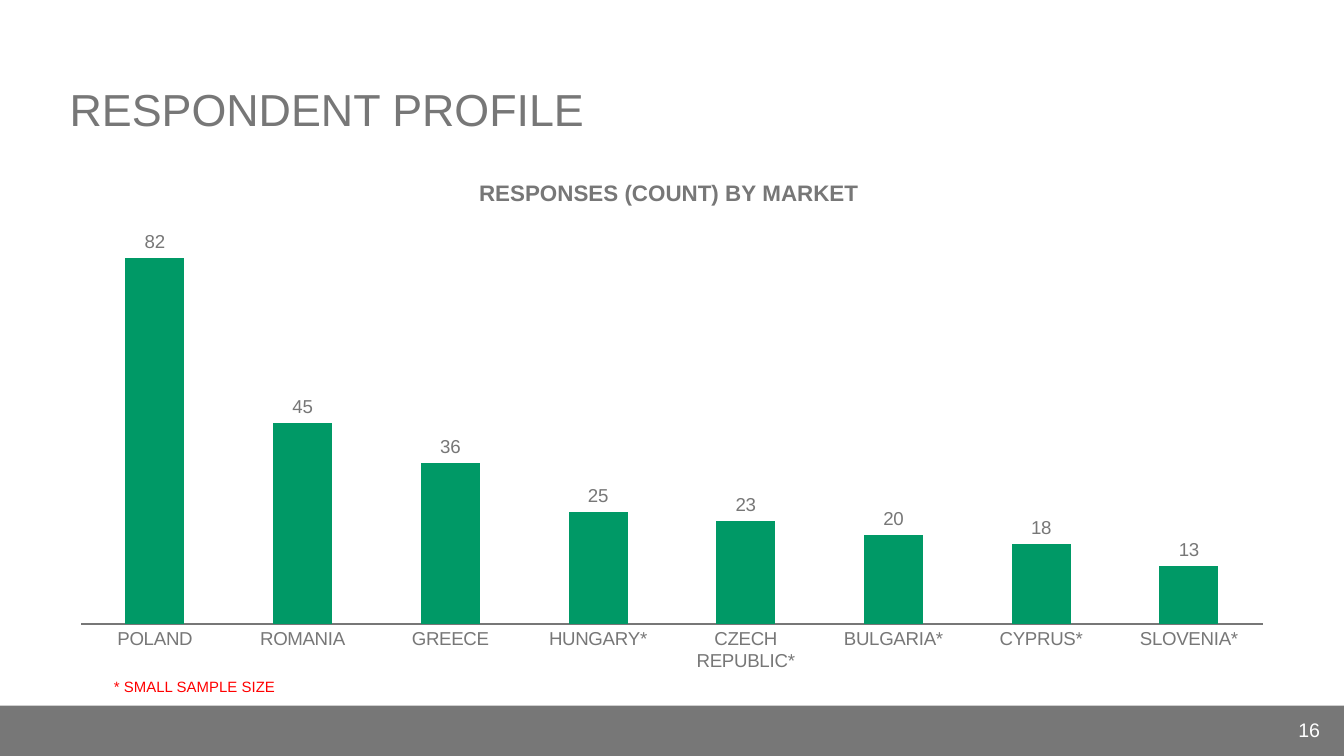
from lxml import etree
from pptx import Presentation
from pptx.chart.data import CategoryChartData
from pptx.dml.color import RGBColor
from pptx.enum import chart as ch, shapes, text
from pptx.oxml import ns
from pptx.util import Inches, Pt

GRAY, GREEN, WHITE, RED = "777777", "009966", "FFFFFF", "FF0000"


def color(value):
    return RGBColor.from_string(value)


def add_text(words, left, top, width, height, size, fill,
             align=text.PP_ALIGN.LEFT, anchor=text.MSO_ANCHOR.TOP):
    frame = slide.shapes.add_textbox(
        Inches(left), Inches(top), Inches(width), Inches(height)).text_frame
    frame.word_wrap = True
    frame.vertical_anchor = anchor
    line = frame.paragraphs[0]
    line.alignment = align
    run = line.add_run()
    run.text = words
    run.font.name = "Arial"
    run.font.size = Pt(size)
    run.font.color.rgb = color(fill)


deck = Presentation()
deck.slide_width = Inches(10)
deck.slide_height = deck.slide_width * 9 // 16
slide = deck.slides.add_slide(deck.slide_layouts[6])

footer_top = Inches(5.25)
footer = slide.shapes.add_shape(
    shapes.MSO_SHAPE.RECTANGLE, Inches(0), footer_top,
    deck.slide_width, deck.slide_height - footer_top)
footer.shadow.inherit = False
footer.fill.solid()
footer.fill.fore_color.rgb = color(GRAY)
footer.line.fill.background()

add_text("RESPONDENT PROFILE", 0.42, 0.12, 9.16, 0.94, size=24, fill=GRAY,
         anchor=text.MSO_ANCHOR.BOTTOM)

markets = {"POLAND": 82, "ROMANIA": 45, "GREECE": 36, "HUNGARY*": 25,
           "CZECH REPUBLIC*": 23, "BULGARIA*": 20, "CYPRUS*": 18, "SLOVENIA*": 13}
responses = CategoryChartData(number_format="0")
responses.categories = list(markets)
responses.add_series("Series 1", list(markets.values()))
chart = slide.shapes.add_chart(
    ch.XL_CHART_TYPE.COLUMN_CLUSTERED, Inches(0.42), Inches(1.19),
    Inches(9.16), Inches(3.88), responses).chart
chart.has_legend = False
chart.font.name = "Arial"
chart.font.size = Pt(10)
chart.font.color.rgb = color(GRAY)

chart.has_title = True
heading = chart.chart_title.text_frame.paragraphs[0].add_run()
heading.text = "RESPONSES (COUNT) BY MARKET"
heading.font.name = "Arial"
heading.font.size = Pt(12)
heading.font.bold = True
heading.font.color.rgb = color(GRAY)
chart.chart_title.include_in_layout = False

market_axis = chart.category_axis
market_axis.major_tick_mark = ch.XL_TICK_MARK.NONE
market_axis.format.line.color.rgb = color(GRAY)
market_axis.format.line.width = Pt(1)
count_axis = chart.value_axis
count_axis.minimum_scale, count_axis.maximum_scale = 0, 90
count_axis.has_major_gridlines = False
count_axis.visible = False

columns = chart.plots[0]
columns.gap_width = 150
columns.overlap = -25
columns.vary_by_categories = False
bars = columns.series[0]
bars.format.fill.solid()
bars.format.fill.fore_color.rgb = color(GREEN)
counts = bars.data_labels
counts.show_value = True
counts.position = ch.XL_LABEL_POSITION.OUTSIDE_END
counts.number_format = "0"
counts.number_format_is_linked = False
counts.font.name = "Arial"
counts.font.size = Pt(10)
counts.font.color.rgb = color(GRAY)

title_part = chart.chart_title._element
plot_part = chart._chartSpace.chart.plotArea
for part, place, inner in (
        (title_part, {"x": 0.34, "y": 0.03}, False),
        (plot_part, {"x": 0.02, "y": 0.12, "w": 0.96, "h": 0.77}, True)):
    for old in part.findall(ns.qn("c:layout")):
        part.remove(old)
    layout = etree.Element(ns.qn("c:layout"))
    manual = etree.SubElement(layout, ns.qn("c:manualLayout"))
    settings = [("layoutTarget", "inner")] if inner else []
    settings += [("xMode", "edge"), ("yMode", "edge"), *place.items()]
    for tag, value in settings:
        etree.SubElement(manual, ns.qn("c:" + tag)).set("val", str(value))
    part.insert(0 if inner else 1, layout)

add_text("16", 9.06, 5.28, 0.86, 0.3, size=10.5, fill=WHITE,
         align=text.PP_ALIGN.RIGHT, anchor=text.MSO_ANCHOR.MIDDLE)
add_text("* SMALL SAMPLE SIZE", 0.75, 4.99, 4.33, 0.34, size=8, fill=RED)

deck.save("out.pptx")
